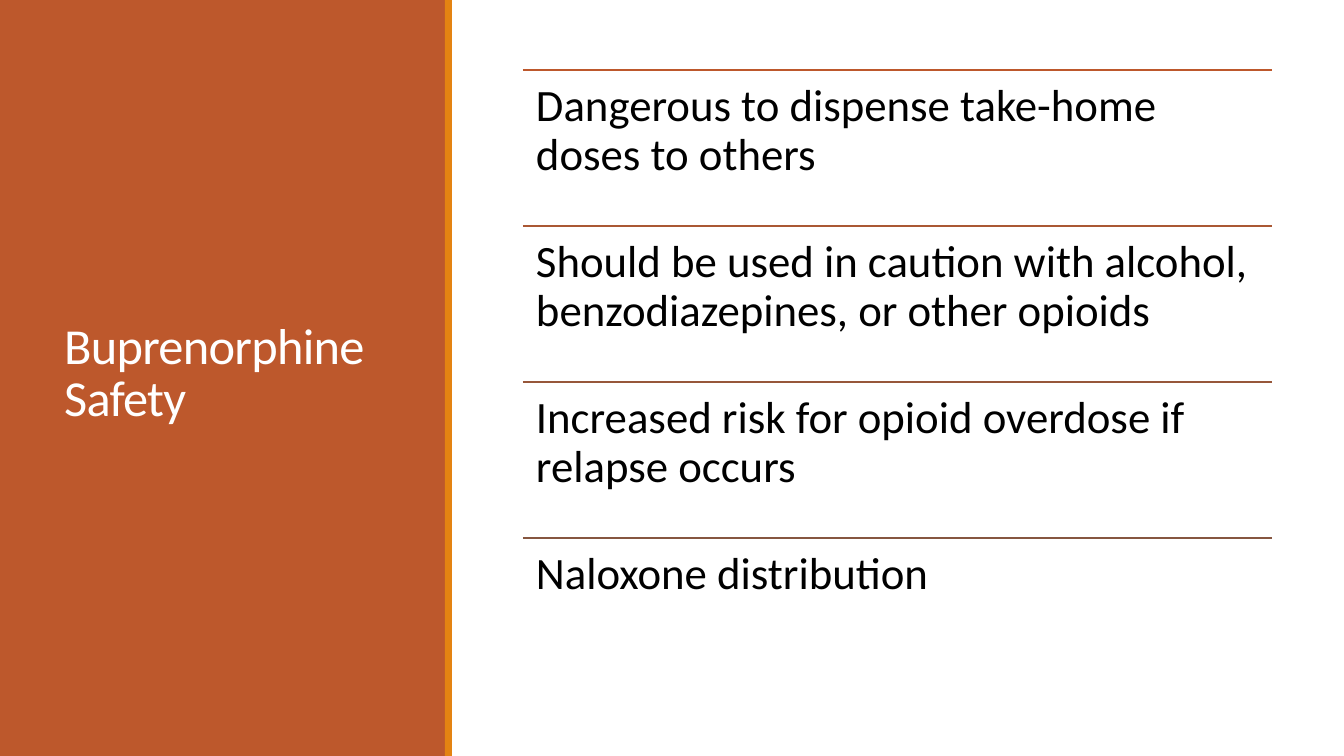
from pptx import Presentation
from pptx.dml.color import RGBColor
from pptx.enum.shapes import MSO_CONNECTOR as Connector, MSO_SHAPE as Shape
from pptx.enum.text import MSO_ANCHOR as Anchor, MSO_AUTO_SIZE as AutoSize, PP_ALIGN as Align
from pptx.oxml.ns import qn
from pptx.util import Emu, Pt
from lxml.etree import SubElement

EMU_PER_PX = 914400 / 100.8
PAGE_WIDTH, PAGE_HEIGHT = 1344, 756
FONT = "Calibri"

WHITE = RGBColor(0xFF, 0xFF, 0xFF)
BLACK = RGBColor(0x00, 0x00, 0x00)
RUST = RGBColor(0xBD, 0x58, 0x2C)
ORANGE = RGBColor(0xE4, 0x83, 0x12)

LIST_LEFT, LIST_TOP, LIST_WIDTH = 523, 70, 749
ROW_HEIGHT, ROW_INSET = 156, 13

SAFETY_POINTS = [
    ("Dangerous to dispense take-home doses to others", RUST),
    ("Should be used in caution with alcohol, benzodiazepines, or other opioids",
     RGBColor(0xAA, 0x58, 0x34)),
    ("Increased risk for opioid overdose if relapse occurs", RGBColor(0x97, 0x57, 0x3A)),
    ("Naloxone distribution", RGBColor(0x86, 0x56, 0x40)),
]


def px(length):
    return Emu(round(length * EMU_PER_PX))


def write(frame, text, size, color, line_spacing):
    frame.text = text
    frame.word_wrap = True
    frame.auto_size = AutoSize.NONE
    para = frame.paragraphs[0]
    para.alignment = Align.LEFT
    para.line_spacing = line_spacing
    span = para.runs[0]
    span.font.name = FONT
    span.font.size = Pt(size)
    span.font.color.rgb = color
    return span


def add_band(page, left, width, color):
    band = page.shapes.add_shape(Shape.RECTANGLE, px(left), 0, px(width), px(PAGE_HEIGHT))
    band.shadow.inherit = False
    band.fill.solid()
    band.fill.fore_color.rgb = color
    band.line.fill.background()


def place_title(page, text):
    title = page.shapes.title
    title.left, title.top, title.width, title.height = px(54), px(57), px(340), px(636)
    title.element.getparent().append(title.element)
    span = write(title.text_frame, text, 36, WHITE, 0.85)
    span.font._element.set("spc", "-50")
    title.text_frame.vertical_anchor = Anchor.MIDDLE


def add_rule(page, top, color):
    rule = page.shapes.add_connector(
        Connector.STRAIGHT, px(LIST_LEFT), px(top), px(LIST_LEFT + LIST_WIDTH), px(top))
    rule.line.color.rgb = color
    rule.line.width = Pt(1.25)
    SubElement(rule.element.spPr, qn("a:effectLst"))


def add_point(page, top, text):
    box = page.shapes.add_textbox(px(LIST_LEFT), px(top), px(LIST_WIDTH), px(ROW_HEIGHT))
    frame = box.text_frame
    frame.margin_left = frame.margin_right = px(ROW_INSET)
    frame.margin_top = frame.margin_bottom = px(ROW_INSET)
    frame.vertical_anchor = Anchor.TOP
    write(frame, text, 32, BLACK, 0.9)


def main():
    deck = Presentation()
    deck.slide_width, deck.slide_height = px(PAGE_WIDTH), px(PAGE_HEIGHT)
    page = deck.slides.add_slide(deck.slide_layouts.get_by_name("Title Only"))
    page.background.fill.solid()
    page.background.fill.fore_color.rgb = WHITE

    add_band(page, 0, 447, RUST)
    place_title(page, "Buprenorphine Safety")
    add_band(page, 445, 7, ORANGE)

    for row, (text, color) in enumerate(SAFETY_POINTS):
        top = LIST_TOP + row * ROW_HEIGHT
        add_rule(page, top, color)
        add_point(page, top, text)

    deck.save("out.pptx")


if __name__ == "__main__":
    main()
